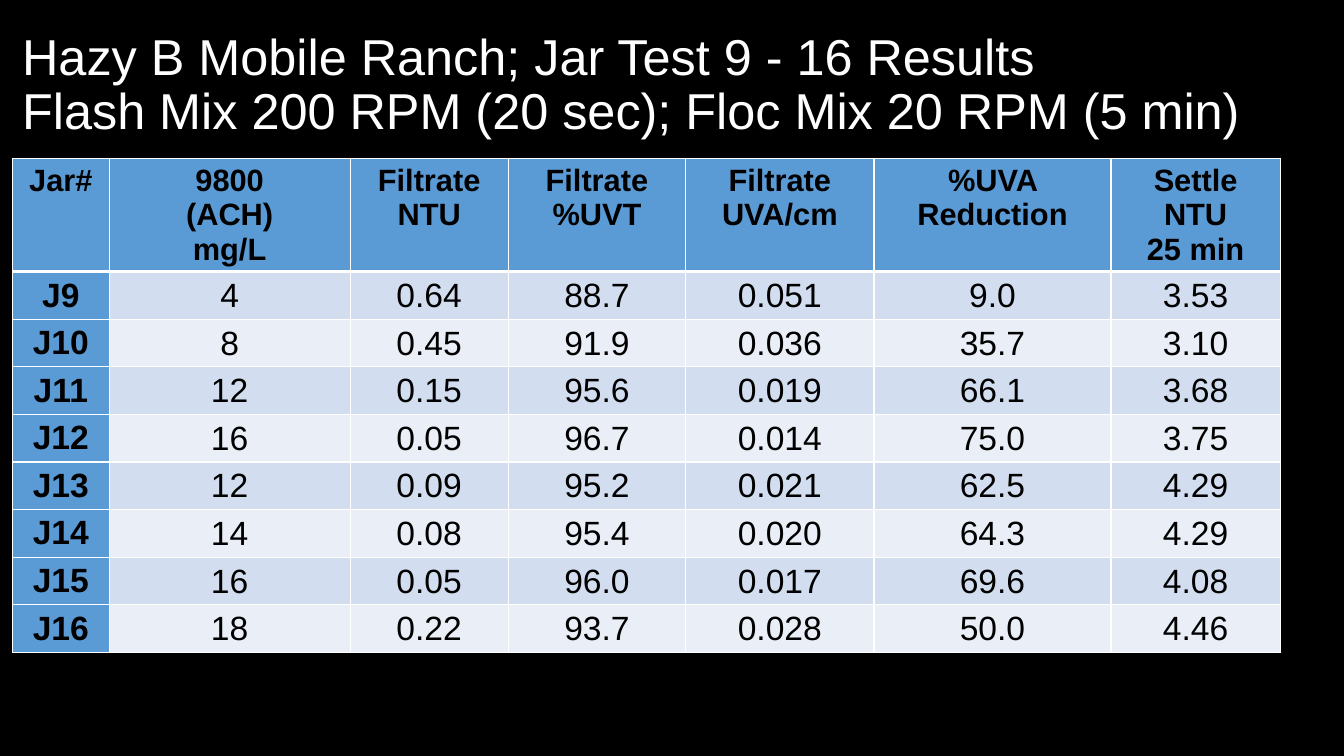
from typing import NamedTuple

from lxml import etree
from pptx import Presentation
from pptx.dml.color import RGBColor
from pptx.enum.text import MSO_ANCHOR as Anchor, MSO_AUTO_SIZE as AutoSize, PP_ALIGN as Align
from pptx.oxml.ns import qn
from pptx.util import Pt

BLACK, WHITE, BLUE = "000000", "FFFFFF", "5B9BD5"
BANDS = ("D2DEEF", "EAEFF7")
HEADER_HEIGHT, ROW_HEIGHT = 81, 34


class Column(NamedTuple):
    heading: str
    width: float


class Jar(NamedTuple):
    name: str
    dose: str
    filtrate_ntu: str
    uvt: str
    uva: str
    reduction: str
    settled_ntu: str


COLUMNS = [
    Column("Jar#", 69.1),
    Column("9800\n(ACH)\nmg/L", 172.1),
    Column("Filtrate\nNTU", 113),
    Column("Filtrate\n%UVT", 126.7),
    Column("Filtrate\nUVA/cm", 134.6),
    Column("%UVA Reduction", 169.2),
    Column("Settle\nNTU\n25 min", 121),
]
JARS = [
    Jar("J9", "4", "0.64", "88.7", "0.051", "9.0", "3.53"),
    Jar("J10", "8", "0.45", "91.9", "0.036", "35.7", "3.10"),
    Jar("J11", "12", "0.15", "95.6", "0.019", "66.1", "3.68"),
    Jar("J12", "16", "0.05", "96.7", "0.014", "75.0", "3.75"),
    Jar("J13", "12", "0.09", "95.2", "0.021", "62.5", "4.29"),
    Jar("J14", "14", "0.08", "95.4", "0.020", "64.3", "4.29"),
    Jar("J15", "16", "0.05", "96.0", "0.017", "69.6", "4.08"),
    Jar("J16", "18", "0.22", "93.7", "0.028", "50.0", "4.46"),
]


def rgb(code: str) -> RGBColor:
    return RGBColor.from_string(code)


def write(tf, text: str, *, size: float, color: str = BLACK, bold: bool = False,
          align=Align.CENTER, spacing: float | None = None) -> None:
    """Write one paragraph per line; a vertical tab breaks a line within one."""
    tf.text = text
    for p in tf.paragraphs:
        p.alignment = align
        p.line_spacing = spacing
        for r in p.runs:
            r.font.name = "Arial"
            r.font.size = Pt(size)
            r.font.bold = bold
            r.font.color.rgb = rgb(color)


def set_borders(cell, *, top: float = 1, bottom: float = 1) -> None:
    tc_pr = cell._tc.get_or_add_tcPr()
    for side, width in (("L", 1), ("R", 1), ("T", top), ("B", bottom)):
        ln = etree.SubElement(tc_pr, qn(f"a:ln{side}"), w=str(Pt(width)))
        fill = etree.SubElement(ln, qn("a:solidFill"))
        etree.SubElement(fill, qn("a:srgbClr"), val=WHITE)


def paint(cell, color: str) -> None:
    cell.fill.solid()
    cell.fill.fore_color.rgb = rgb(color)


def add_title(s) -> None:
    title = s.shapes.title
    title.left, title.top, title.width, title.height = Pt(8.6), Pt(9.4), Pt(938.2), Pt(104.4)
    tf = title.text_frame
    tf.word_wrap = True
    tf.auto_size = AutoSize.NONE
    tf.vertical_anchor = Anchor.MIDDLE
    write(tf, "Hazy B Mobile Ranch; Jar Test 9 - 16 Results\v"
              "Flash Mix 200 RPM (20 sec); Floc Mix 20 RPM (5 min)",
          size=36, color=WHITE, align=Align.LEFT, spacing=0.9)


def add_results(s) -> None:
    width = sum(column.width for column in COLUMNS)
    height = HEADER_HEIGHT + ROW_HEIGHT * len(JARS)
    table = s.shapes.add_table(len(JARS) + 1, len(COLUMNS),
                               Pt(8.9), Pt(113), Pt(width), Pt(height)).table
    table.first_col = True
    table.rows[0].height = Pt(HEADER_HEIGHT)
    for j, column in enumerate(COLUMNS):
        table.columns[j].width = Pt(column.width)
        cell = table.cell(0, j)
        set_borders(cell, bottom=3)
        paint(cell, BLUE)
        write(cell.text_frame, column.heading, size=22, bold=True)
    for i, jar in enumerate(JARS, start=1):
        table.rows[i].height = Pt(ROW_HEIGHT)
        for j, value in enumerate(jar):
            cell = table.cell(i, j)
            is_name = j == 0
            set_borders(cell, top=3 if i == 1 else 1)
            paint(cell, BLUE if is_name else BANDS[(i - 1) % 2])
            write(cell.text_frame, value, size=24, bold=is_name)
            if not is_name:
                cell.vertical_anchor = Anchor.MIDDLE
                cell.margin_left = cell.margin_right = cell.margin_top = Pt(0.72)
                cell.margin_bottom = Pt(0)


def main() -> None:
    prs = Presentation()
    prs.slide_width, prs.slide_height = Pt(960), Pt(540)
    s = prs.slides.add_slide(prs.slide_layouts[5])
    s.background.fill.solid()
    s.background.fill.fore_color.rgb = rgb(BLACK)
    add_title(s)
    add_results(s)
    prs.save("out.pptx")


if __name__ == "__main__":
    main()
